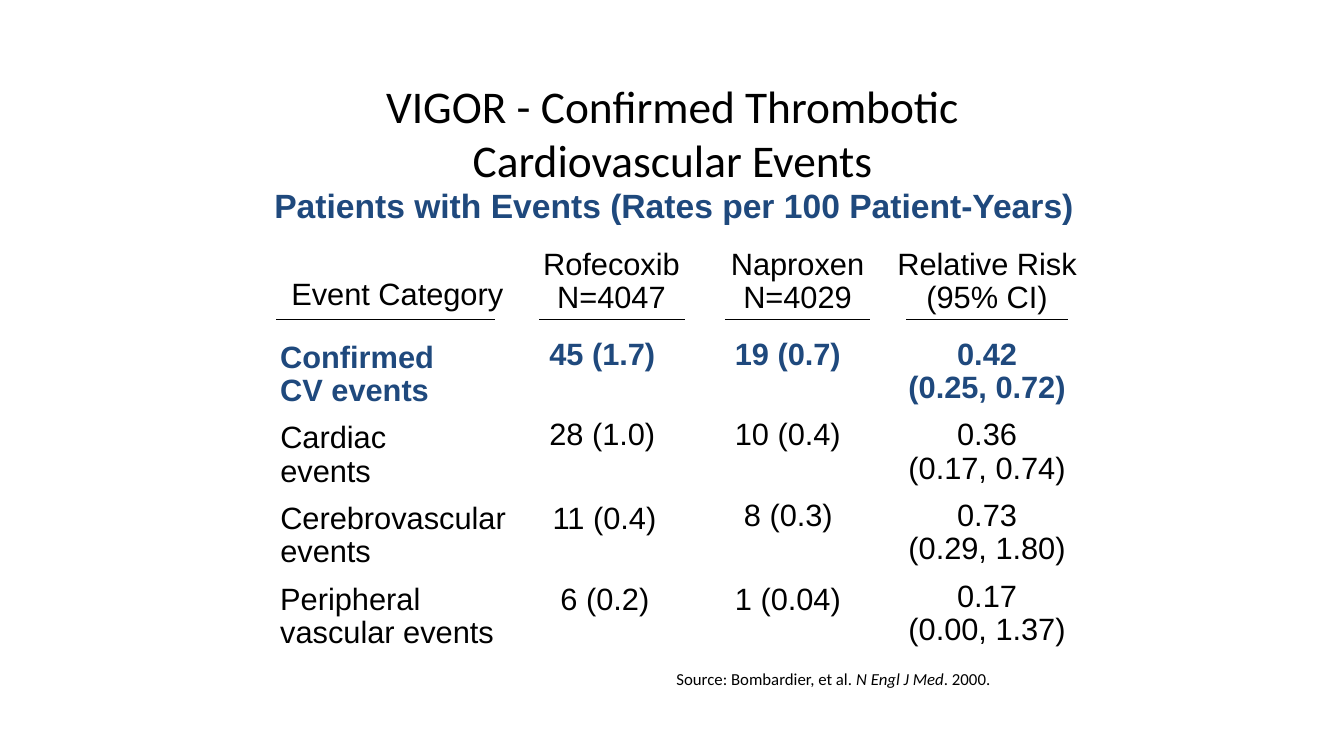
from pptx import Presentation
from pptx.dml.color import RGBColor
from pptx.enum.shapes import MSO_CONNECTOR
from pptx.enum.text import MSO_ANCHOR, MSO_AUTO_SIZE, PP_ALIGN
from pptx.oxml import parse_xml
from pptx.util import Inches, Pt

BLACK = RGBColor(0x00, 0x00, 0x00)
NAVY = RGBColor(0x1F, 0x49, 0x7D)
LEFT, CENTER, RIGHT = PP_ALIGN.LEFT, PP_ALIGN.CENTER, PP_ALIGN.RIGHT
MIDDLE = MSO_ANCHOR.MIDDLE
GROW = MSO_AUTO_SIZE.SHAPE_TO_FIT_TEXT
STRAIGHT = MSO_CONNECTOR.STRAIGHT
NO_EFFECTS = '<a:effectLst xmlns:a="http://schemas.openxmlformats.org/drawingml/2006/main"/>'

LINE_HEIGHT = 0.33
PAIR_HEIGHT = 0.67
RULE_TOP = 3.17
FIRST_ROW = 3.36
ROW_STEP = 0.8
LABEL_DROP = 0.03

HEADINGS = [
    (["Event Category"], 2.89, 2.77, 2.13, LINE_HEIGHT, LEFT),
    (["Rofecoxib", "N=4047"], 5.38, 2.47, 1.37, PAIR_HEIGHT, CENTER),
    (["Naproxen", "N=4029"], 7.24, 2.47, 1.34, PAIR_HEIGHT, CENTER),
    (["Relative Risk", "(95% CI)"], 8.89, 2.47, 1.8, PAIR_HEIGHT, CENTER),
]
RULES = [(2.74, 4.91), (5.35, 6.79), (7.19, 8.63), (8.99, 10.59)]
EVENTS = [
    ("Confirmed CV events", 1.83,
     [("45 (1.7)", 5.43, 1.07, 0), ("19 (0.7)", 7.27, 1.07, 0)],
     ["0.42", "(0.25, 0.72)"]),
    ("Cardiac events", 1.72,
     [("28 (1.0)", 5.43, 1.07, 0), ("10 (0.4)", 7.27, 1.07, 0)],
     ["0.36", "(0.17, 0.74)"]),
    ("Cerebrovascular events", 2.38,
     [("11 (0.4)", 5.31, 1.2, LABEL_DROP), ("8 (0.3)", 7.37, 0.89, 0)],
     ["0.73", "(0.29, 1.80)"]),
    ("Peripheral vascular events", 2.34,
     [("6 (0.2)", 5.35, 1.09, LABEL_DROP), ("1 (0.04)", 7.19, 1.15, LABEL_DROP)],
     ["0.17", "(0.00, 1.37)"]),
]


class Page:
    def __init__(self, deck):
        self.slide = deck.slides.add_slide(deck.slide_layouts[6])

    def box(self, left, top, width, height):
        return self.slide.shapes.add_textbox(
            Inches(left), Inches(top), Inches(width), Inches(height))

    def style(self, para, size, font="Calibri", color=BLACK, bold=False):
        para.font.size = Pt(size)
        para.font.name = font
        para.font.color.rgb = color
        para.font.bold = bold

    def label(self, lines, left, top, width, height, align=LEFT,
              color=BLACK, bold=False, size=22, wrap=False):
        frame = self.box(left, top, width, height).text_frame
        frame.margin_left = frame.margin_right = 0
        frame.margin_top = frame.margin_bottom = 0
        frame.word_wrap = wrap
        frame.auto_size = GROW
        frame.text = "\n".join(lines)
        for para in frame.paragraphs:
            para.alignment = align
            para.line_spacing = 0.9
            self.style(para, size, "Arial", color, bold)

    def title(self, text, left, top, width, height):
        frame = self.box(left, top, width, height).text_frame
        frame.word_wrap = True
        frame.vertical_anchor = MIDDLE
        frame.text = text
        para = frame.paragraphs[0]
        para.alignment = CENTER
        self.style(para, 32.4)

    def source(self, spans, left, top, width, height):
        frame = self.box(left, top, width, height).text_frame
        frame.word_wrap = True
        frame.auto_size = GROW
        para = frame.paragraphs[0]
        self.style(para, 12)
        for text, italic in spans:
            span = para.add_run()
            span.text = text
            span.font.italic = italic

    def rule(self, start, end, top):
        line = self.slide.shapes.add_connector(
            STRAIGHT, Inches(start), Inches(top), Inches(end), Inches(top))
        line.line.color.rgb = BLACK
        line.line.width = Pt(1.25)
        line._element.spPr.append(parse_xml(NO_EFFECTS))


def main():
    deck = Presentation()
    deck.slide_width = Inches(13.33)
    deck.slide_height = Inches(7.5)
    page = Page(deck)

    page.title("VIGOR - Confirmed Thrombotic Cardiovascular Events",
               2.42, 0.69, 8.5, 1.25)
    page.label(["Patients with Events (Rates per 100 Patient-Years)"],
               2.68, 1.88, 8.01, 0.36, CENTER, NAVY, True, size=24)

    for heading in HEADINGS:
        page.label(*heading)
    for start, end in RULES:
        page.rule(start, end, RULE_TOP)

    for row, (event, event_width, rates, risk) in enumerate(EVENTS):
        top = FIRST_ROW + row * ROW_STEP
        bold = row == 0
        color = NAVY if bold else BLACK
        page.label([event], 2.78, top + LABEL_DROP, event_width, PAIR_HEIGHT,
                   LEFT, color, bold, wrap=True)
        for rate, left, width, drop in rates:
            page.label([rate], left, top + drop, width, LINE_HEIGHT,
                       RIGHT, color, bold, wrap=drop > 0)
        page.label(risk, 9, top, 1.58, PAIR_HEIGHT, CENTER, color, bold)

    page.source([("Source: Bombardier, et al. ", False),
                 ("N Engl J Med", True), (". 2000.", False)],
                6.61, 6.59, 3.51, 0.3)
    deck.save("out.pptx")


if __name__ == "__main__":
    main()
